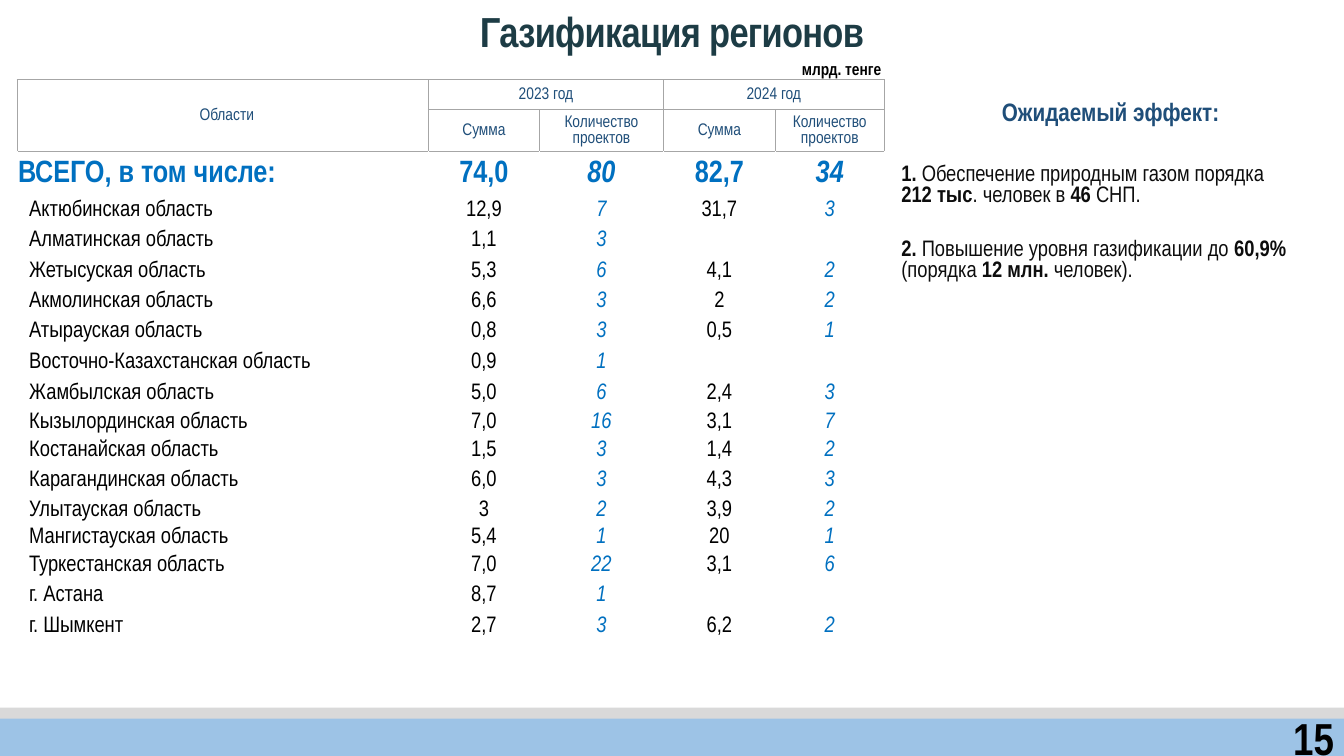
import pptx
import pptx.dml.color
import pptx.enum.shapes
import pptx.enum.text
import pptx.oxml
import pptx.oxml.ns
import pptx.util

SCALE = 9144
ALIGN = pptx.enum.text.PP_ALIGN
MIDDLE = pptx.enum.text.MSO_ANCHOR.MIDDLE
BLACK, NAVY, BLUE, INK = "000000", "1F4E79", "0070C0", "0D0D0D"
GRID = "A6A6A6"

COLUMNS = [408, 110, 123, 111, 108]
ROWS = [30, 41, 45, 28, 31, 29, 31, 29, 28, 30, 28, 27, 32, 28, 27, 28, 31, 30]
COUNT_HEADING = "Количество\nпроектов"
TOTAL = ["ВСЕГО, в том числе:", "74,0", "80", "82,7", "34"]
REGIONS = [
    ["Актюбинская область", "12,9", "7", "31,7", "3"],
    ["Алматинская область", "1,1", "3", "", ""],
    ["Жетысуская область", "5,3", "6", "4,1", "2"],
    ["Акмолинская область", "6,6", "3", "2", "2"],
    ["Атырауская область", "0,8", "3", "0,5", "1"],
    ["Восточно-Казахстанская область", "0,9", "1", "", ""],
    ["Жамбылская область", "5,0", "6", "2,4", "3"],
    ["Кызылординская область", "7,0", "16", "3,1", "7"],
    ["Костанайская область", "1,5", "3", "1,4", "2"],
    ["Карагандинская область", "6,0", "3", "4,3", "3"],
    ["Улытауская область", "3", "2", "3,9", "2"],
    ["Мангистауская область", "5,4", "1", "20", "1"],
    ["Туркестанская область", "7,0", "22", "3,1", "6"],
    ["г. Астана", "8,7", "1", "", ""],
    ["г. Шымкент", "2,7", "3", "6,2", "2"],
]
EFFECTS = [
    [[("1.", True), (" Обеспечение природным газом порядка", False)],
     [("212 тыс", True), (". человек в ", False), ("46", True), (" СНП.", False)]],
    [[("2.", True), (" Повышение уровня газификации до ", False), ("60,9% ", True),
      ("(порядка", False), (" 12 млн. ", True), ("человек).", False)]],
]


def px(length):
    return pptx.util.Emu(length * SCALE)


def colour(value):
    return pptx.dml.color.RGBColor.from_string(value)


class Page:
    font = "Arial Narrow"

    def __init__(self, deck):
        self.slide = deck.slides.add_slide(deck.slide_layouts[5])

    def text(self, frame, paragraphs, size, ink, align=ALIGN.LEFT, italic=False, spacing=None):
        frame.word_wrap = True
        for number, runs in enumerate(paragraphs):
            para = frame.add_paragraph() if number else frame.paragraphs[0]
            para.alignment = align
            if spacing:
                para.line_spacing = spacing
            for words, bold in runs:
                span = para.add_run()
                span.text = words
                span.font.name = self.font
                span.font.size = pptx.util.Pt(size)
                span.font.bold = bold
                span.font.italic = italic
                span.font.color.rgb = colour(ink)

    def title(self, words, left, top, width, height):
        box = self.slide.shapes.title
        box.left, box.top, box.width, box.height = map(px, (left, top, width, height))
        frame = box.text_frame
        frame.auto_size = pptx.enum.text.MSO_AUTO_SIZE.NONE
        frame.vertical_anchor = MIDDLE
        self.text(frame, [[(words, True)]], 30, "1D3C45", ALIGN.CENTER, spacing=1.1)
        frame.paragraphs[0].runs[0].font._element.set("spc", "-50")

    def label(self, words, left, top, width, height):
        box = self.slide.shapes.add_textbox(*map(px, (left, top, width, height)))
        box.text_frame.vertical_anchor = MIDDLE
        self.text(box.text_frame, [[(words, True)]], 12, BLACK, ALIGN.RIGHT, spacing=1.1)

    def bar(self, left, top, width, height, fill, words=None):
        box = self.slide.shapes.add_shape(
            pptx.enum.shapes.MSO_SHAPE.RECTANGLE, *map(px, (left, top, width, height)))
        box.shadow.inherit = False
        box.fill.solid()
        box.fill.fore_color.rgb = colour(fill)
        box.line.fill.background()
        if words:
            box.text_frame.vertical_anchor = MIDDLE
            self.text(box.text_frame, [[(words, True)]], 32, BLACK, ALIGN.RIGHT)

    def table(self, left, top, columns, rows, margins):
        frame = self.slide.shapes.add_table(
            len(rows), len(columns), *map(px, (left, top, sum(columns), sum(rows))))
        table = frame.table
        table.first_row = table.horz_banding = False
        for column, width in zip(table.columns, columns):
            column.width = px(width)
        for row, height in zip(table.rows, rows):
            row.height = px(height)
        for cell in table.iter_cells():
            cell.fill.background()
            cell.vertical_anchor = MIDDLE
            (cell.margin_left, cell.margin_top,
             cell.margin_right, cell.margin_bottom) = map(px, margins)
        return table

    def border(self, cell, sides):
        properties = cell._tc.get_or_add_tcPr()
        for position, side in enumerate(sides):
            properties.insert(position, pptx.oxml.parse_xml(
                f'<a:ln{side} {pptx.oxml.ns.nsdecls("a")} w="12700"><a:solidFill>'
                f'<a:srgbClr val="{GRID}"/></a:solidFill></a:ln{side}>'))

    def heading(self, cell, words):
        lines = [[(line, False)] for line in words.split("\n")]
        self.text(cell.text_frame, lines, 12, NAVY, ALIGN.CENTER)

    def figures(self, table, row, values, size, ink, bold):
        for column, words in enumerate(values):
            if not words:
                continue
            count = column in (2, 4)
            align = ALIGN.CENTER if column else ALIGN.LEFT
            self.text(table.cell(row, column).text_frame, [[(words, bold)]],
                      size, BLUE if count else ink, align, italic=count)


def main():
    deck = pptx.Presentation()
    deck.slide_width, deck.slide_height = px(1333), px(750)
    page = Page(deck)
    page.title("Газификация регионов", 0, -1, 1333, 57)
    page.bar(0, 712, 1333, 40, "9DC3E6", "15")
    page.bar(0, 702, 1333, 11, "D9D9D9")

    regions = page.table(17, 79, COLUMNS, ROWS, (1, 1, 1, 0))
    for column in range(len(COLUMNS)):
        for row in range(2):
            page.border(regions.cell(row, column), "LRTB")
        page.border(regions.cell(2, column), "T")
    regions.cell(0, 0).merge(regions.cell(1, 0))
    regions.cell(0, 0).margin_left = px(9)
    page.heading(regions.cell(0, 0), "Области")
    for column, year in ((1, "2023 год"), (3, "2024 год")):
        regions.cell(0, column).merge(regions.cell(0, column + 1))
        page.heading(regions.cell(0, column), year)
        page.heading(regions.cell(1, column), "Сумма")
        page.heading(regions.cell(1, column + 1), COUNT_HEADING)
    page.figures(regions, 2, TOTAL, 22, BLUE, True)
    for row, values in enumerate(REGIONS, 3):
        regions.cell(row, 0).margin_left = px(12)
        page.figures(regions, row, values, 16, BLACK, False)

    effects = page.table(884, 81, [435], [67, 74, 75], (10, 5, 10, 5))
    page.text(effects.cell(0, 0).text_frame, [[("Ожидаемый эффект:", True)]],
              18, NAVY, ALIGN.CENTER)
    for row, paragraphs in enumerate(EFFECTS, 1):
        page.text(effects.cell(row, 0).text_frame, paragraphs, 16, INK)

    page.label("млрд. тенге", 764, 43, 120, 48)
    deck.save("out.pptx")


if __name__ == "__main__":
    main()
